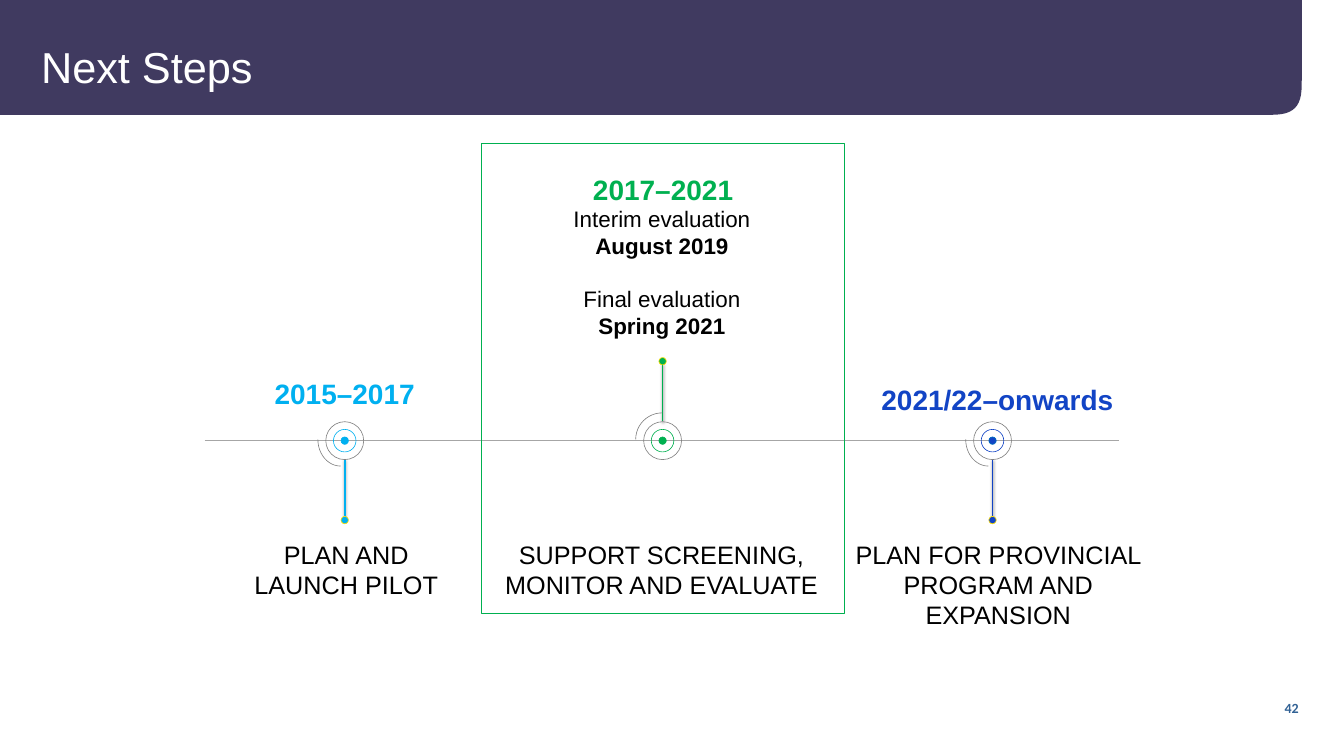
"""Build the "Next Steps" timeline slide."""
from math import cos, pi, sin

from lxml import etree
from pptx import Presentation
from pptx.dml.color import RGBColor
from pptx.enum.shapes import MSO_CONNECTOR, MSO_SHAPE as Shape
from pptx.enum.text import MSO_ANCHOR as Anchor, PP_ALIGN as Align
from pptx.oxml.ns import qn
from pptx.util import Inches, Pt

WIDTH, HEIGHT = 21.99, 12.37
PURPLE = RGBColor(0x40, 0x3A, 0x60)
WHITE = RGBColor(0xFF, 0xFF, 0xFF)
BLACK = RGBColor(0, 0, 0)
SKY = RGBColor(0x00, 0xB0, 0xF0)
GREEN = RGBColor(0x00, 0xB0, 0x50)
BLUE = RGBColor(0x12, 0x44, 0xC5)
CORE_BLUE = RGBColor(0x00, 0x70, 0xC0)
YELLOW = RGBColor(0xFF, 0xDF, 0x00)
GREY = RGBColor(0x80, 0x80, 0x80)
AXIS_GREY = RGBColor(0xA6, 0xA6, 0xA6)
SLATE = RGBColor(0x32, 0x62, 0x95)

# All lengths below are hundredths of the slide's width.
TITLE, TITLE_BOX = "Next Steps", (3.05, 3, 93.86, 3.91)
PAGE, PAGE_BOX = "42", (95.59, 52.07, 1.41, 1.18)
BAND_WIDTH, BAND_HEIGHT, BAND_CORNER = 96.86, 8.55, 2.73
AXIS_Y, AXIS_START, AXIS_END = 32.79, 15.23, 83.27
FOCUS_BOX = (35.83, 10.69, 27.01, 34.97)
EVALUATION_BOX = (41.11, 15.05, 16.28, 10.55)
EVALUATIONS = [("Interim evaluation", "August 2019"),
               ("Final evaluation", "Spring 2021")]
OUTER, MIDDLE, DOT = 2.82, 1.68, 0.55
STEM_START, STEM_END, STEM_DOT = 1.43, 5.71, 5.91
PHASES = [
    dict(x=25.65, side=1, color=SKY, core=SKY,
         dates="2015–2017", dates_box=(18.78, 27.83, 13.73, 3),
         caption=["PLAN AND", "LAUNCH PILOT"],
         caption_box=(18.01, 39.88, 15.51, 5)),
    dict(x=49.3, side=-1, color=GREEN, core=GREEN,
         dates="2017–2021", dates_box=(42.47, 12.6, 13.73, 3),
         caption=["SUPPORT SCREENING, MONITOR AND EVALUATE"],
         caption_box=(36.11, 39.88, 26.24, 5)),
    dict(x=73.85, side=1, color=BLUE, core=CORE_BLUE,
         dates="2021/22–onwards", dates_box=(64.48, 28.24, 19.46, 3),
         caption=["PLAN FOR PROVINCIAL PROGRAM AND EXPANSION"],
         caption_box=(62.07, 39.88, 24.42, 7.28)),
]


def span(share):
    return Inches(share * WIDTH / 100)


def style_font(paragraph, size, color, bold=False, name="Arial"):
    font = paragraph.font
    font.name, font.size, font.bold = name, Pt(size), bold
    font.color.rgb = color


def add_outline(slide, preset, box, line, fill=None, weight=0.75):
    outline = slide.shapes.add_shape(preset, *map(span, box))
    outline.shadow.inherit = False
    if fill is None:
        outline.fill.background()
    else:
        outline.fill.solid()
        outline.fill.fore_color.rgb = fill
    outline.line.color.rgb = line
    outline.line.width = Pt(weight)
    return outline


def add_circle(slide, x, y, diameter, line, fill=None):
    box = (x - diameter / 2, y - diameter / 2, diameter, diameter)
    add_outline(slide, Shape.FLOWCHART_CONNECTOR, box, line, fill)


def add_line(slide, start, end, color, weight, shaded=False):
    line = slide.shapes.add_connector(
        MSO_CONNECTOR.STRAIGHT, *map(span, (*start, *end)))
    line.line.color.rgb = color
    line.line.width = Pt(weight)
    effects = etree.SubElement(line._element.spPr, qn("a:effectLst"))
    if shaded:
        shadow = etree.SubElement(
            effects, qn("a:outerShdw"), blurRad=str(Pt(3.1)),
            dist=str(Pt(1.6)), dir="5400000", rotWithShape="0")
        tint = etree.SubElement(shadow, qn("a:srgbClr"), val=str(BLACK))
        etree.SubElement(tint, qn("a:alpha"), val="38000")


def add_text(slide, box, lines, size, color, bold=False):
    frame = slide.shapes.add_textbox(*map(span, box)).text_frame
    frame.word_wrap = True
    frame.text = "\n".join(lines)
    for paragraph in frame.paragraphs:
        paragraph.alignment = Align.CENTER
        style_font(paragraph, size, color, bold)
    return frame


def clear_margins(frame):
    frame.margin_left = frame.margin_right = 0
    frame.margin_top = frame.margin_bottom = 0


def add_band(slide):
    angles = [pi / 2 * step / 12 for step in range(12, -1, -1)]
    corner = [(BAND_WIDTH - BAND_CORNER * (1 - abs(cos(a)) ** 0.6),
               BAND_HEIGHT - BAND_CORNER * (1 - abs(sin(a)) ** 0.6))
              for a in angles]
    points = [(0, BAND_HEIGHT), *corner, (BAND_WIDTH, 0)]
    builder = slide.shapes.build_freeform(0, 0)
    builder.add_line_segments([(span(x), span(y)) for x, y in points])
    band = builder.convert_to_shape()
    band.shadow.inherit = False
    band.fill.solid()
    band.fill.fore_color.rgb = PURPLE
    band.line.fill.background()
    slide.shapes._spTree.insert(2, band._element)


def add_title(slide):
    title = slide.shapes.title
    title.left, title.top, title.width, title.height = map(span, TITLE_BOX)
    frame = title.text_frame
    frame.text = TITLE
    frame.vertical_anchor = Anchor.MIDDLE
    clear_margins(frame)
    frame.paragraphs[0].alignment = Align.LEFT
    style_font(frame.paragraphs[0], 51, WHITE)


def add_phase(slide, phase):
    x, side, color = phase["x"], phase["side"], phase["color"]
    add_text(slide, phase["caption_box"], phase["caption"], 29.7, BLACK)
    add_line(slide, (x, AXIS_Y + side * STEM_START),
             (x, AXIS_Y + side * STEM_END), color, 2, shaded=True)
    add_circle(slide, x, AXIS_Y + side * STEM_DOT, DOT, YELLOW, color)
    add_circle(slide, x, AXIS_Y, OUTER, GREY)
    add_circle(slide, x, AXIS_Y, DOT, phase["core"], color)
    add_circle(slide, x, AXIS_Y, MIDDLE, color)
    arc_width = 3.37 if side > 0 else 3.96
    arc = add_outline(slide, Shape.ARC,
                      (x - 2, AXIS_Y - 2.07, arc_width, 3.96), GREY)
    arc.rotation = 180 if side > 0 else 270
    add_text(slide, phase["dates_box"], [phase["dates"]], 33, color, True)


def add_evaluations(slide):
    lines = [line for pair in EVALUATIONS for line in pair]
    frame = add_text(slide, EVALUATION_BOX, lines, 26.4, BLACK)
    for date in frame.paragraphs[1::2]:
        date.font.bold = True
    for later in frame.paragraphs[2::2]:
        later.space_before = Pt(30.4)


def add_page_number(slide):
    frame = slide.shapes.add_textbox(*map(span, PAGE_BOX)).text_frame
    frame.text = PAGE
    clear_margins(frame)
    style_font(frame.paragraphs[0], 16.5, SLATE, True, "Calibri")


def main():
    deck = Presentation()
    deck.slide_width, deck.slide_height = Inches(WIDTH), Inches(HEIGHT)
    slide = deck.slides.add_slide(deck.slide_layouts[5])
    add_band(slide)
    add_title(slide)
    add_line(slide, (AXIS_START, AXIS_Y), (AXIS_END, AXIS_Y), AXIS_GREY, 0.75)
    for phase in PHASES:
        add_phase(slide, phase)
    add_outline(slide, Shape.RECTANGLE, FOCUS_BOX, GREEN, weight=2)
    add_evaluations(slide)
    add_page_number(slide)
    deck.save("out.pptx")


if __name__ == "__main__":
    main()
